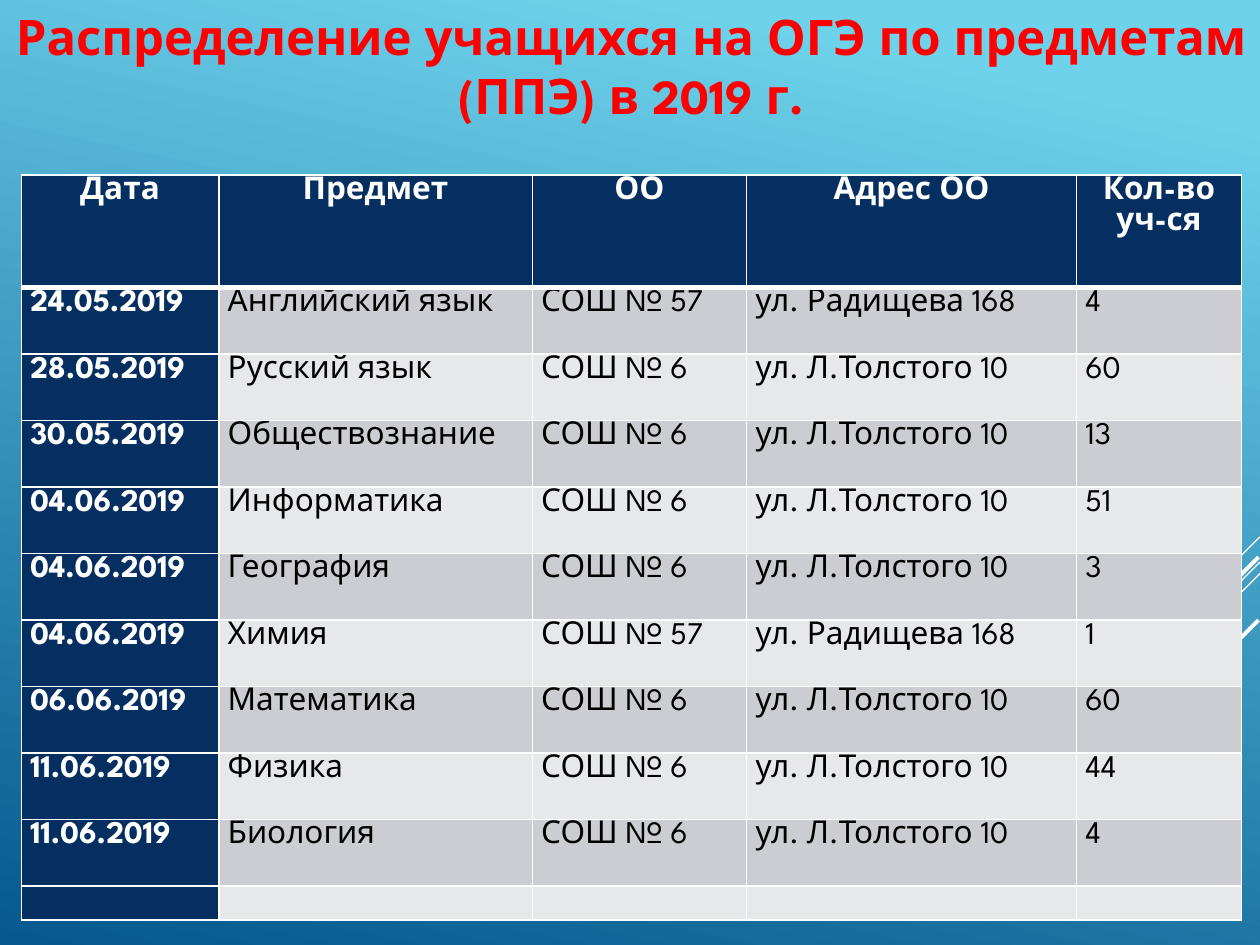
"""Build the slide with the exam schedule by subject."""
import pptx
import pptx.dml.color
import pptx.enum.shapes
import pptx.enum.text
import pptx.oxml
import pptx.oxml.ns
import pptx.util

Cm = pptx.util.Cm
Pt = pptx.util.Pt
RGB = pptx.dml.color.RGBColor
ALIGN = pptx.enum.text.PP_ALIGN

FONT = "League Spartan"
NAVY = RGB(0x05, 0x2F, 0x61)
DARK = RGB(0xCC, 0xCD, 0xD2)
PALE = RGB(0xE7, 0xE8, 0xEA)
WHITE = RGB(0xFF, 0xFF, 0xFF)
BLACK = RGB(0, 0, 0)
RED = RGB(0xFF, 0, 0)
SKY = RGB(0x6E, 0xD2, 0xEB)
DEEP = RGB(0x06, 0x58, 0x8E)

TITLE = "Распределение учащихся на ОГЭ по предметам (ППЭ) в 2019 г."
HEAD = ("Дата", "Предмет", "ОО", "Адрес ОО", "Кол-во уч-ся")
SITES = {
    6: ("СОШ № 6", "ул. Л.Толстого 10"),
    57: ("СОШ № 57", "ул. Радищева 168"),
}
EXAMS = [
    ("24.05.2019", "Английский язык", 57, "4"),
    ("28.05.2019", "Русский язык", 6, "60"),
    ("30.05.2019", "Обществознание", 6, "13"),
    ("04.06.2019", "Информатика", 6, "51"),
    ("04.06.2019", "География", 6, "3"),
    ("04.06.2019", "Химия", 57, "1"),
    ("06.06.2019", "Математика", 6, "60"),
    ("11.06.2019", "Физика", 6, "44"),
    ("11.06.2019", "Биология", 6, "4"),
]
ROWS = [HEAD]
ROWS += [(day, name, *SITES[site], count) for day, name, site, count in EXAMS]
ROWS += [("",) * len(HEAD)]
WIDTHS = (3.98, 6.32, 4.32, 6.65, 3.33)
HEIGHTS = [2.27] + [1.34] * len(EXAMS) + [0.69]
STREAKS = [
    (25.4, 10.82, 23.29, 12.93, 0.75),
    (25.4, 11.33, 18.54, 18.21, 0.75),
    (25.4, 11.56, 21.03, 15.93, 0.75),
    (25.37, 11.23, 21.39, 15.21, 2.25),
    (25.37, 12.5, 22.48, 15.39, 2.25),
]


def paint(slide):
    fill = slide.background.fill
    fill.gradient()
    fill.gradient_angle = 360 - 102
    for stop, color, place in zip(fill.gradient_stops, (SKY, DEEP), (0.1, 1)):
        stop.color.rgb = color
        stop.position = place


def streak(slide, x1, y1, x2, y2, width):
    kind = pptx.enum.shapes.MSO_CONNECTOR.STRAIGHT
    line = slide.shapes.add_connector(kind, Cm(x1), Cm(y1), Cm(x2), Cm(y2))
    line.line.color.rgb = WHITE
    line.line.width = Pt(width)
    effect = pptx.oxml.ns.qn("a:effectLst")
    line._element.spPr.append(line._element.makeelement(effect, {}))


def style(para, size, color, bold, align, space):
    para.alignment = align
    para.line_spacing = space
    font = para.font
    font.name, font.size, font.bold = FONT, Pt(size), bold
    font.color.rgb = color


def edge(cell, row):
    props = cell._tc.get_or_add_tcPr()
    for side in "LRTB":
        thick = (row, side) in ((0, "B"), (1, "T"))
        props.append(pptx.oxml.parse_xml(
            f'<a:ln{side} {pptx.oxml.ns.nsdecls("a")} w="{Pt(3 if thick else 1)}">'
            f'<a:solidFill><a:srgbClr val="{WHITE}"/></a:solidFill></a:ln{side}>'))


def write(cell, text, row, col):
    edge(cell, row)
    lead = row == 0 or col == 0
    cell.fill.solid()
    cell.fill.fore_color.rgb = NAVY if lead else DARK if row % 2 else PALE
    cell.margin_left = cell.margin_right = Cm(0.18)
    cell.margin_top = cell.margin_bottom = 0
    cell.text = text
    para = cell.text_frame.paragraphs[0]
    if not text:
        para._p.get_or_add_endParaRPr().set("sz", "1000")
    style(para, 18 if text else 10, WHITE if lead else BLACK, lead,
          ALIGN.LEFT if row else ALIGN.CENTER, 1.07)


def grid(slide):
    frame = slide.shapes.add_table(
        len(ROWS), len(HEAD), Cm(0.43), Cm(3.53), Cm(sum(WIDTHS)), Cm(sum(HEIGHTS)))
    table = frame.table
    table.first_col = True
    for col, width in zip(table.columns, WIDTHS):
        col.width = Cm(width)
    for row, height in zip(table.rows, HEIGHTS):
        row.height = Cm(height)
    for row, texts in enumerate(ROWS):
        for col, text in enumerate(texts):
            write(table.cell(row, col), text, row, col)


def head(slide):
    title = slide.shapes.title
    title.left, title.top = Cm(0.05), Cm(0)
    title.width, title.height = Cm(25.35), Cm(2.64)
    frame = title.text_frame
    frame.text = TITLE
    frame.word_wrap = True
    frame.auto_size = pptx.enum.text.MSO_AUTO_SIZE.SHAPE_TO_FIT_TEXT
    frame.vertical_anchor = pptx.enum.text.MSO_ANCHOR.MIDDLE
    style(frame.paragraphs[0], 28, RED, True, ALIGN.CENTER, 1.0)


def main():
    deck = pptx.Presentation()
    deck.slide_width, deck.slide_height = Cm(25.4), Cm(19.05)
    slide = deck.slides.add_slide(deck.slide_layouts[5])
    paint(slide)
    head(slide)
    for item in STREAKS:
        streak(slide, *item)
    grid(slide)
    deck.save("out.pptx")


if __name__ == "__main__":
    main()
